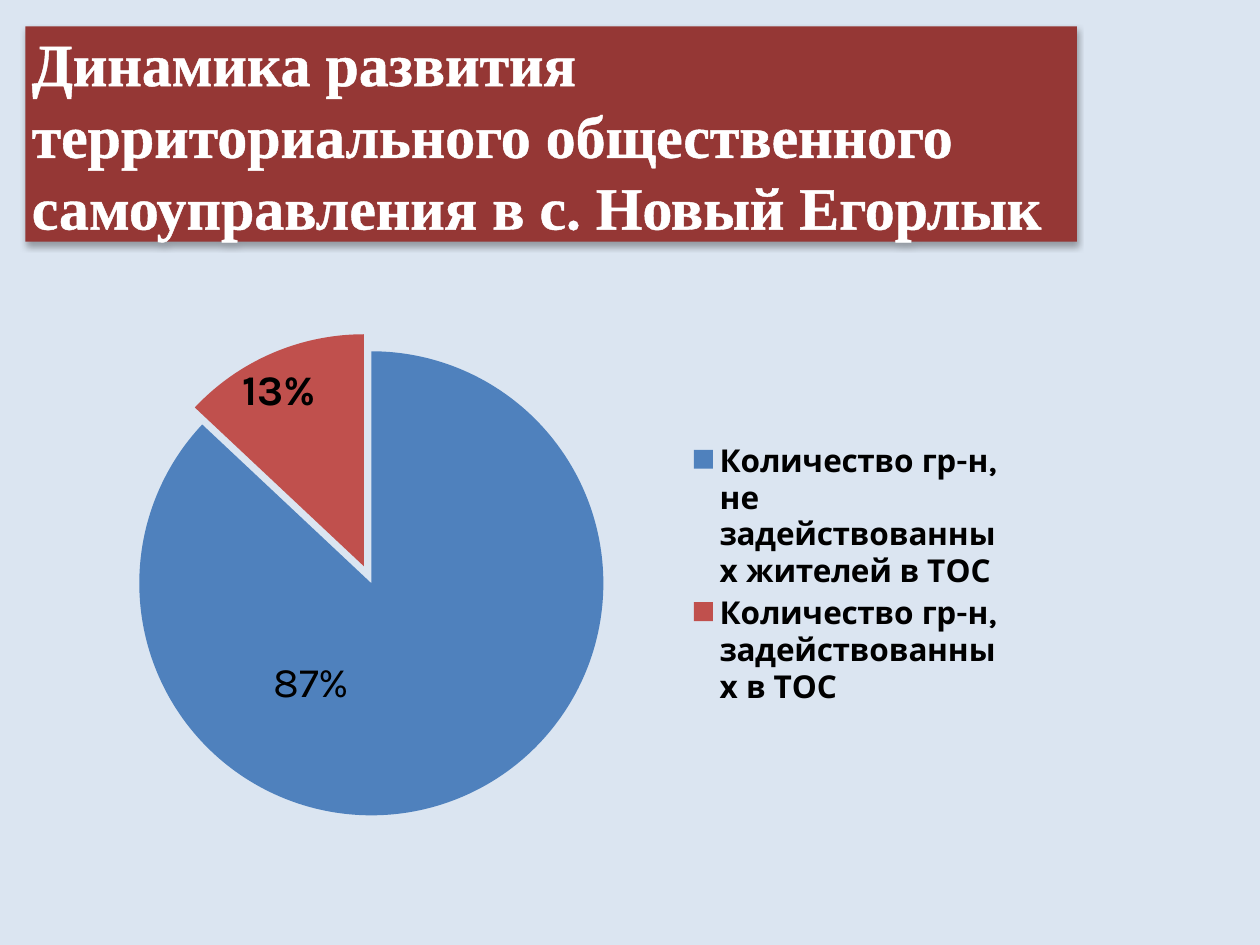
"""Build a slide on the growth of local self-government with a pie chart."""
from lxml import etree
from pptx import Presentation
from pptx import util as u
from pptx.chart import data
from pptx.dml.color import RGBColor
from pptx.enum import chart as ch
from pptx.enum import text
from pptx.oxml import parse_xml
from pptx.oxml.ns import nsdecls, qn

PALE = RGBColor(0xDB, 0xE5, 0xF1)
WINE = RGBColor(0x95, 0x37, 0x35)
BLUE = RGBColor(0x4F, 0x81, 0xBD)
RED = RGBColor(0xC0, 0x50, 0x4D)
WHITE = RGBColor(0xFF, 0xFF, 0xFF)
BLACK = RGBColor(0, 0, 0)


def write(words, frame, size, face, color, bold, lead):
    par = frame.paragraphs[0]
    par.alignment = text.PP_ALIGN.LEFT
    par.line_spacing = u.Pt(lead)
    run = par.add_run()
    run.text = words
    font = run.font
    font.size, font.name, font.bold = u.Pt(size), face, bold
    font.color.rgb = color
    font._element.insert(0, parse_xml(
        f'<a:ln {nsdecls("a")} w="18415"><a:solidFill>'
        f'<a:srgbClr val="{color}"/></a:solidFill></a:ln>'))


def place(node, spot, **sizes):
    old = node.find(qn("c:layout"))
    if old is not None:
        node.remove(old)
    box = etree.Element(qn("c:layout"))
    form = etree.SubElement(box, qn("c:manualLayout"))
    for key, val in sizes.items():
        etree.SubElement(form, qn("c:" + key)).set("val", str(val))
    node.insert(spot, box)


deck = Presentation()
deck.slide_width, deck.slide_height = u.Cm(25.4), u.Cm(19.05)
slide = deck.slides.add_slide(deck.slide_layouts[5])
slide.background.fill.solid()
slide.background.fill.fore_color.rgb = PALE

title = slide.shapes.title
title.left, title.top = u.Cm(0.51), u.Cm(0.53)
title.width, title.height = u.Cm(21.2), u.Cm(4.34)
title.fill.solid()
title.fill.fore_color.rgb = WINE
title._element.spPr.append(parse_xml(
    f'<a:effectLst {nsdecls("a")}><a:outerShdw blurRad="44450" dist="27940" '
    'dir="5400000" rotWithShape="0"><a:srgbClr val="000000">'
    '<a:alpha val="32000"/></a:srgbClr></a:outerShdw></a:effectLst>'))
frame = title.text_frame
frame.word_wrap = True
frame.auto_size = text.MSO_AUTO_SIZE.NONE
frame.vertical_anchor = text.MSO_ANCHOR.BOTTOM
frame.margin_left = frame.margin_right = u.Cm(0.13)
frame.margin_top = frame.margin_bottom = 0
write("Динамика развития территориального общественного "
      "самоуправления в с. Новый Егорлык", frame=frame, size=34.2,
      face="Times New Roman", color=WHITE, bold=True, lead=41)

stats = data.CategoryChartData(number_format="0%")
stats.categories = ["Количество гр-н, не задействованных жителей в ТОС",
                    "Количество гр-н, задействованных в ТОС"]
stats.add_series("Series 1", (0.87, 0.13))
chart = slide.shapes.add_chart(ch.XL_CHART_TYPE.PIE, u.Cm(0.99), u.Cm(5.33),
                               u.Cm(19.46), u.Cm(12.52), stats).chart
chart.has_title = False
chart.font.size, chart.font.name = u.Pt(18), "Karla"
chart.font.color.rgb = BLACK
chart.has_legend = True
legend = chart.legend
legend.position = ch.XL_LEGEND_POSITION.RIGHT
legend.include_in_layout = False
legend.font.bold = True
legend.font.size = u.Pt(18)
place(legend._element, 1, xMode="edge", yMode="edge",
      x=0.66, y=0.28, w=0.33, h=0.44)

plot = chart.plots[0]
plot.vary_by_categories = True
place(chart._chartSpace.chart.plotArea, 0, layoutTarget="inner",
      xMode="edge", yMode="edge", x=0.08, y=0.1, w=0.5, h=0.8)
pie = plot.series[0]
for num, (color, bold, x, y) in enumerate(
        [(BLUE, False, -0.11, -0.01), (RED, True, -0.04, -0.11)]):
    point = pie.points[num]
    point.format.fill.solid()
    point.format.fill.fore_color.rgb = color
    label = point.data_label
    label.font.size, label.font.bold = u.Pt(24), bold
    label.font.color.rgb = BLACK
    label.position = ch.XL_LABEL_POSITION.CENTER
    place(label._dLbl, 1, x=x, y=y)
labels = pie.data_labels
labels.show_value = True
labels.number_format, labels.number_format_is_linked = "0%", False
labels.font.size, labels.font.bold = u.Pt(24), True
burst = etree.Element(qn("c:explosion"))
burst.set("val", "4")
pie._element.find(qn("c:dPt")).addprevious(burst)

deck.save("out.pptx")
